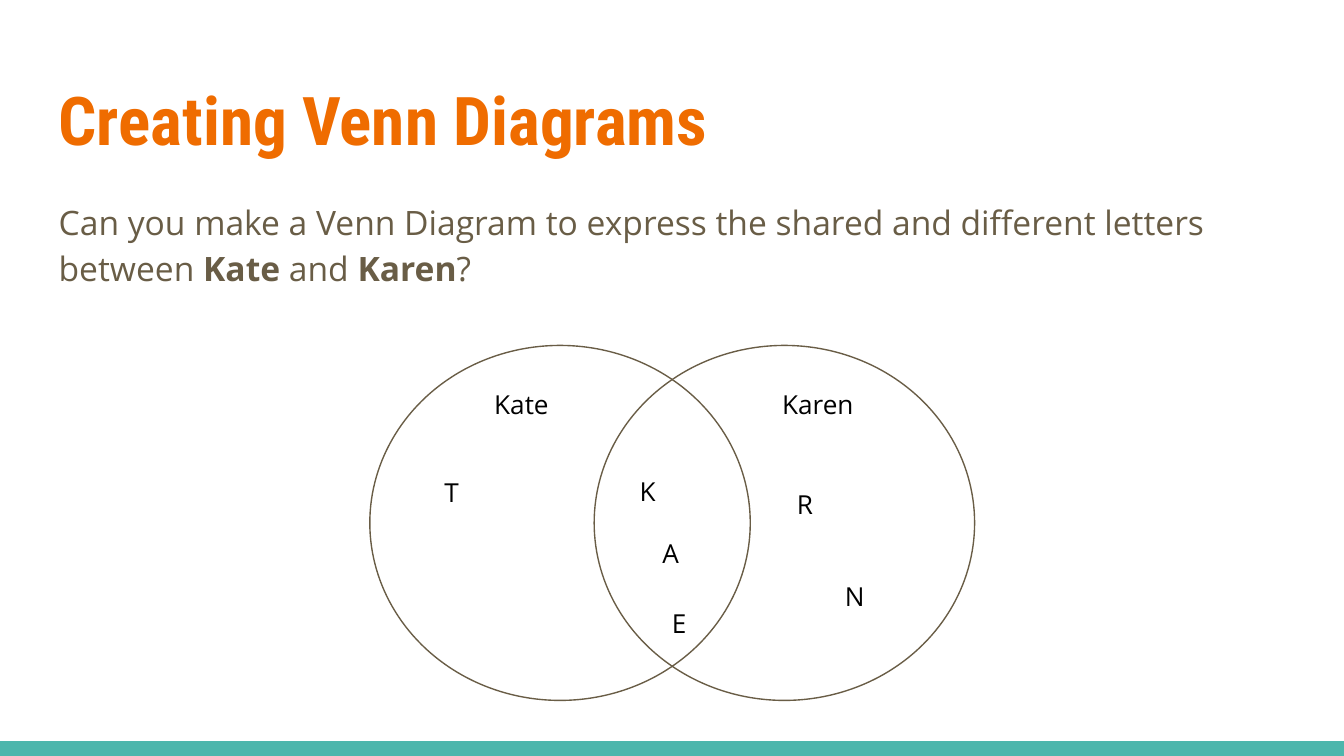
from dataclasses import dataclass

from pptx import Presentation
from pptx.dml.color import RGBColor
from pptx.enum.shapes import MSO_SHAPE
from pptx.enum.text import MSO_ANCHOR
from pptx.util import Cm, Pt


@dataclass(frozen=True)
class Theme:
    title_color: str = "EF6C00"
    body_color: str = "695D46"
    label_color: str = "000000"
    bar_color: str = "4DB6AC"
    background: str = "FFFFFF"
    title_font: str = "Roboto Condensed"
    body_font: str = "Open Sans"
    title_size: float = 36
    body_size: float = 18
    label_size: float = 14
    outline_width: float = 0.75
    text_inset: float = 0.25


def add_run(paragraph, text, *, font, size, color, bold=False):
    run = paragraph.add_run()
    run.text = text
    run.font.name = font
    run.font.size = Pt(size)
    run.font.bold = bold
    run.font.color.rgb = RGBColor.from_string(color)


class SlideBuilder:
    def __init__(self, slide, theme):
        self.slide = slide
        self.theme = theme
        fill = slide.background.fill
        fill.solid()
        fill.fore_color.rgb = RGBColor.from_string(theme.background)

    def shape(self, kind, box):
        shape = self.slide.shapes.add_shape(kind, *map(Cm, box))
        shape.shadow.inherit = False
        return shape

    def bar(self, box):
        shape = self.shape(MSO_SHAPE.RECTANGLE, box)
        shape.fill.solid()
        shape.fill.fore_color.rgb = RGBColor.from_string(self.theme.bar_color)
        shape.line.fill.background()

    def circle(self, box):
        shape = self.shape(MSO_SHAPE.OVAL, box)
        shape.fill.background()
        shape.line.color.rgb = RGBColor.from_string(self.theme.body_color)
        shape.line.width = Pt(self.theme.outline_width)

    def paragraph(self, box):
        frame = self.slide.shapes.add_textbox(*map(Cm, box)).text_frame
        frame.word_wrap = True
        frame.vertical_anchor = MSO_ANCHOR.TOP
        inset = Cm(self.theme.text_inset)
        frame.margin_left = frame.margin_right = inset
        frame.margin_top = frame.margin_bottom = inset
        return frame.paragraphs[0]

    def title(self, text, box):
        theme = self.theme
        add_run(self.paragraph(box), text, font=theme.title_font,
                size=theme.title_size, color=theme.title_color, bold=True)

    def body(self, parts, box):
        theme = self.theme
        paragraph = self.paragraph(box)
        paragraph.line_spacing = 1.15
        paragraph.space_after = Pt(16)
        for text, bold in parts:
            add_run(paragraph, text, font=theme.body_font,
                    size=theme.body_size, color=theme.body_color, bold=bold)

    def label(self, text, box):
        theme = self.theme
        add_run(self.paragraph(box), text, font=theme.body_font,
                size=theme.label_size, color=theme.label_color)


QUESTION = [
    ("Can you make a Venn Diagram to express the shared and different letters between ", False),
    ("Kate", True),
    (" and ", False),
    ("Karen", True),
    ("?", False),
]

LABELS = [
    ("Kate", (9.09, 7.09, 2.46, 0.53)),
    ("Karen", (14.53, 7.09, 2.31, 0.53)),
    ("K", (11.84, 8.74, 1.02, 1.04)),
    ("A", (12.27, 9.91, 0.81, 1.47)),
    ("T", (8.15, 8.76, 0.81, 1.14)),
    ("E", (12.45, 11.23, 0.61, 0.79)),
    ("R", (14.81, 8.99, 0.81, 1.14)),
    ("N", (15.72, 10.72, 1.02, 1.04)),
]


def main():
    presentation = Presentation()
    presentation.slide_width = Cm(25.4)
    presentation.slide_height = Cm(14.29)
    slide = presentation.slides.add_slide(presentation.slide_layouts[6])
    builder = SlideBuilder(slide, Theme())

    builder.bar((0, 14.01, 25.4, 0.28))
    builder.title("Creating Venn Diagrams", (0.86, 1.24, 23.67, 1.96))
    builder.body(QUESTION, (0.86, 3.45, 23.67, 1.96))
    for left in (6.99, 11.23):
        builder.circle((left, 6.53, 7.19, 6.71))
    for text, box in LABELS:
        builder.label(text, box)

    presentation.save("out.pptx")


if __name__ == "__main__":
    main()
